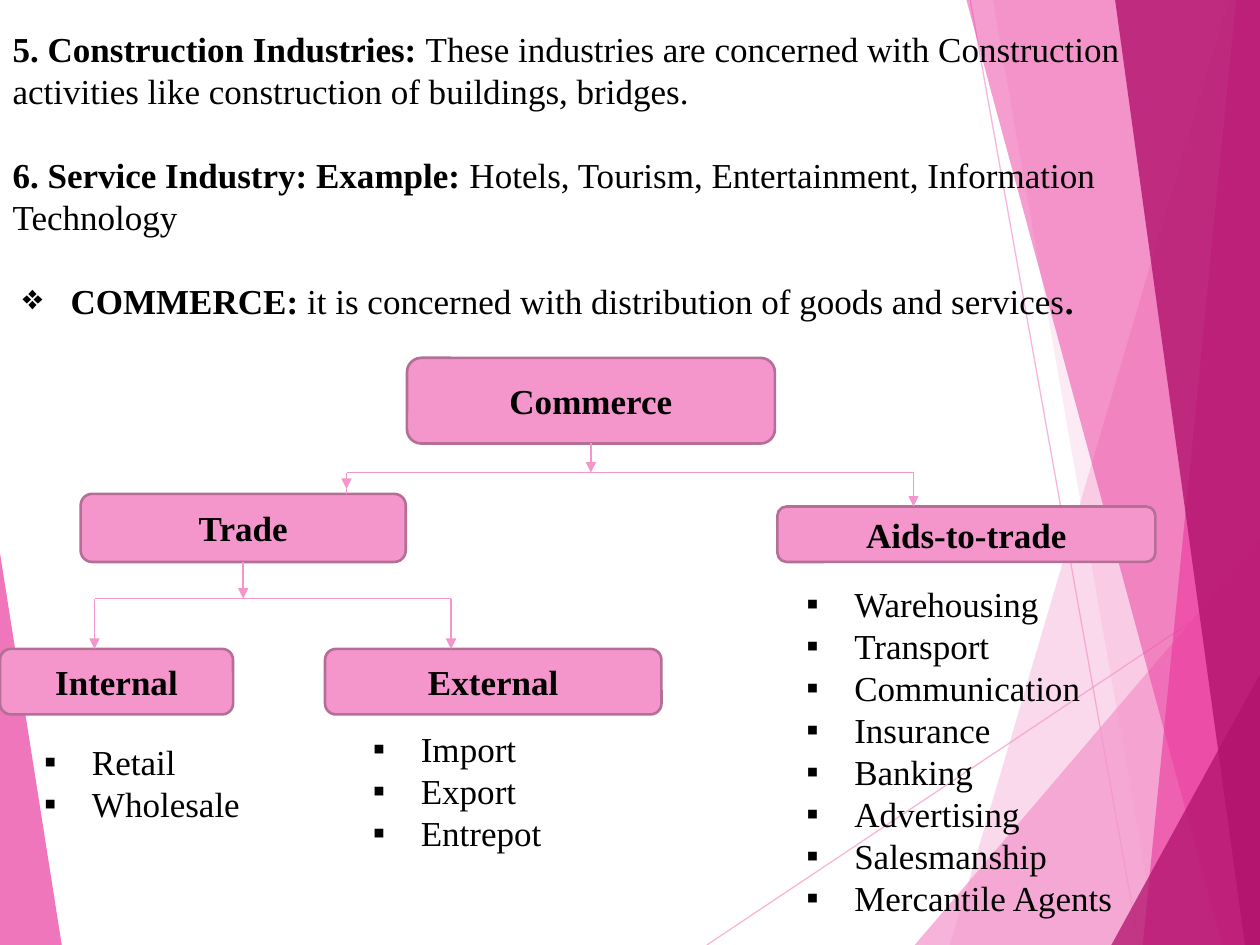
from lxml.etree import SubElement
from pptx import Presentation
from pptx.dml.color import RGBColor
from pptx.enum.shapes import MSO_CONNECTOR, MSO_SHAPE
from pptx.enum.text import MSO_ANCHOR, MSO_AUTO_SIZE, PP_ALIGN
from pptx.oxml.ns import qn
from pptx.util import Inches, Pt

COLORS = {
    "pink": "F496CB",
    "magenta": "EB3D9F",
    "berry": "B2136D",
    "border": "B56F96",
    "text": "000000",
}
FONT = "Times New Roman"
BOTTOM, RIGHT = 7.5, 10

FACETS = [
    ("pink", 36, [(9.75, 0), (7.54, BOTTOM), (RIGHT, BOTTOM), (RIGHT, 0)]),
    ("pink", 20, [(7.88, 0), (9.19, BOTTOM), (RIGHT, BOTTOM), (RIGHT, 0)]),
    ("pink", 72, [(7.26, BOTTOM), (RIGHT, 4.29), (RIGHT, BOTTOM)]),
    ("magenta", 50, [(7.67, 0), (9.7, BOTTOM), (RIGHT, BOTTOM), (RIGHT, 0)]),
    ("magenta", 66, [(9.81, 0), (9.07, BOTTOM), (RIGHT, BOTTOM), (RIGHT, 0)]),
    ("berry", 80, [(8.85, 0), (9.88, BOTTOM), (RIGHT, BOTTOM), (RIGHT, 0)]),
    ("berry", 76, [(8.82, BOTTOM), (RIGHT, 5.35), (RIGHT, BOTTOM)]),
    ("magenta", 70, [(0, 4.39), (0.49, BOTTOM), (0, BOTTOM)]),
]

NODES = {
    "Commerce": (3.23, 2.84, 2.92, 0.68),
    "Trade": (0.64, 3.92, 2.58, 0.54),
    "Aids-to-trade": (6.17, 4.02, 3, 0.44),
    "Internal": (0, 5.15, 1.85, 0.52),
    "External": (2.58, 5.15, 2.67, 0.52),
}

INTRO = [
    [("5. Construction Industries: ", True),
     ("These industries are concerned with Construction activities like "
      "construction of buildings, bridges.", False)],
    [("6. Service Industry: Example: ", True),
     ("Hotels, Tourism, Entertainment, Information Technology", False)],
]
HEADING = [
    [("COMMERCE: ", True),
     ("it is concerned with distribution of goods and services", False),
     (".", True)],
]
LISTS = [
    ((0.25, 5.83, 1.83, 0.77), ["Retail", "Wholesale"]),
    ((2.86, 5.72, 2.5, 1.11), ["Import", "Export", "Entrepot"]),
    ((6.3, 4.57, 3, 2.79),
     ["Warehousing", "Transport", "Communication", "Insurance", "Banking",
      "Advertising", "Salesmanship", "Mercantile Agents"]),
]


def rgb(name):
    return RGBColor.from_string(COLORS[name])


def set_alpha(shape, percent):
    for color in shape.element.spPr.iter(qn("a:srgbClr")):
        SubElement(color, qn("a:alpha"), val=str(percent * 1000))


def format_run(r, bold):
    r.font.name = FONT
    r.font.size = Pt(20)
    r.font.bold = bold
    r.font.color.rgb = rgb("text")


def add_facet(slide, color, alpha, points):
    corners = [(Inches(x), Inches(y)) for x, y in points]
    builder = slide.shapes.build_freeform(*corners[0])
    builder.add_line_segments(corners[1:], close=True)
    sp = builder.convert_to_shape()
    sp.shadow.inherit = False
    sp.fill.solid()
    sp.fill.fore_color.rgb = rgb(color)
    sp.line.fill.background()
    set_alpha(sp, alpha)


def add_line(slide, start, end, width=1, arrow=False):
    line = slide.shapes.add_connector(
        MSO_CONNECTOR.STRAIGHT, *[Inches(v) for v in (*start, *end)])
    line.line.color.rgb = rgb("pink")
    line.line.width = Pt(width)
    if arrow:
        SubElement(line.line._get_or_add_ln(), qn("a:tailEnd"), type="triangle")
    SubElement(line.element.spPr, qn("a:effectLst"))
    return line


def add_node(slide, label, box):
    sp = slide.shapes.add_shape(
        MSO_SHAPE.ROUNDED_RECTANGLE, *[Inches(v) for v in box])
    sp.shadow.inherit = False
    sp.fill.solid()
    sp.fill.fore_color.rgb = rgb("pink")
    sp.line.color.rgb = rgb("border")
    sp.line.width = Pt(1.5)
    tf = sp.text_frame
    tf.text = label
    tf.vertical_anchor = MSO_ANCHOR.MIDDLE
    tf.paragraphs[0].alignment = PP_ALIGN.CENTER
    format_run(tf.paragraphs[0].runs[0], True)
    return sp


def set_bullet(p, bullet):
    pPr = p._p.get_or_add_pPr()
    indent = Inches(0.38) if bullet else 0
    pPr.set("marL", str(indent))
    pPr.set("indent", str(-indent))
    if bullet:
        SubElement(pPr, qn("a:buChar"), char=bullet)
    else:
        SubElement(pPr, qn("a:buNone"))


def fill_placeholder(sp, box, paragraphs, bullet=None, gap=0):
    sp.left, sp.top, sp.width, sp.height = [Inches(v) for v in box]
    sp.element.getparent().append(sp.element)
    tf = sp.text_frame
    tf.word_wrap = True
    tf.auto_size = MSO_AUTO_SIZE.NONE
    tf.vertical_anchor = MSO_ANCHOR.TOP
    for i, runs in enumerate(paragraphs):
        p = tf.add_paragraph() if i else tf.paragraphs[0]
        set_bullet(p, bullet)
        p.alignment = PP_ALIGN.LEFT
        p.line_spacing = 1.0
        p.space_before = Pt(gap if i else 0)
        p.space_after = Pt(0)
        for text, bold in runs:
            r = p.add_run()
            r.text = text
            format_run(r, bold)


def add_branch(slide, parent, rail_y, left, right):
    x = (parent.left + parent.width / 2) / Inches(1)
    y = (parent.top + parent.height) / Inches(1)
    trunk = add_line(slide, (x, y), (x, rail_y), arrow=True)
    trunk.begin_connect(parent, 2)
    add_line(slide, (left[0], rail_y), (right[0], rail_y))
    for end in (left, right):
        add_line(slide, (end[0], rail_y), end, arrow=True)


def main():
    prs = Presentation()
    prs.slide_width, prs.slide_height = Inches(RIGHT), Inches(BOTTOM)
    slide = prs.slides.add_slide(prs.slide_layouts.get_by_name("Comparison"))
    title, intro, *bodies = list(slide.placeholders)

    for start, end in (((5.61, BOTTOM), (RIGHT, 4.57)), ((7.7, 0), (9.04, BOTTOM))):
        set_alpha(add_line(slide, start, end, width=0.75), 70)
    for facet in FACETS:
        add_facet(slide, *facet)

    fill_placeholder(intro, (0, 0.17, 9.75, 2.12), INTRO, gap=24)
    fill_placeholder(title, (0.08, 2.17, 9.42, 0.44), HEADING, "❖")

    nodes = {label: add_node(slide, label, box) for label, box in NODES.items()}
    add_branch(slide, nodes["Commerce"], 3.75, (2.75, 3.88), (7.25, 4.02))
    add_line(slide, (2.75, 3.88), (2.75, 3.92))
    add_branch(slide, nodes["Trade"], 4.75, (0.75, 5.15), (3.58, 5.15))

    for sp, (box, items) in zip(bodies, LISTS):
        fill_placeholder(sp, box, [[(item, False)] for item in items], "▪")

    prs.save("out.pptx")


if __name__ == "__main__":
    main()
